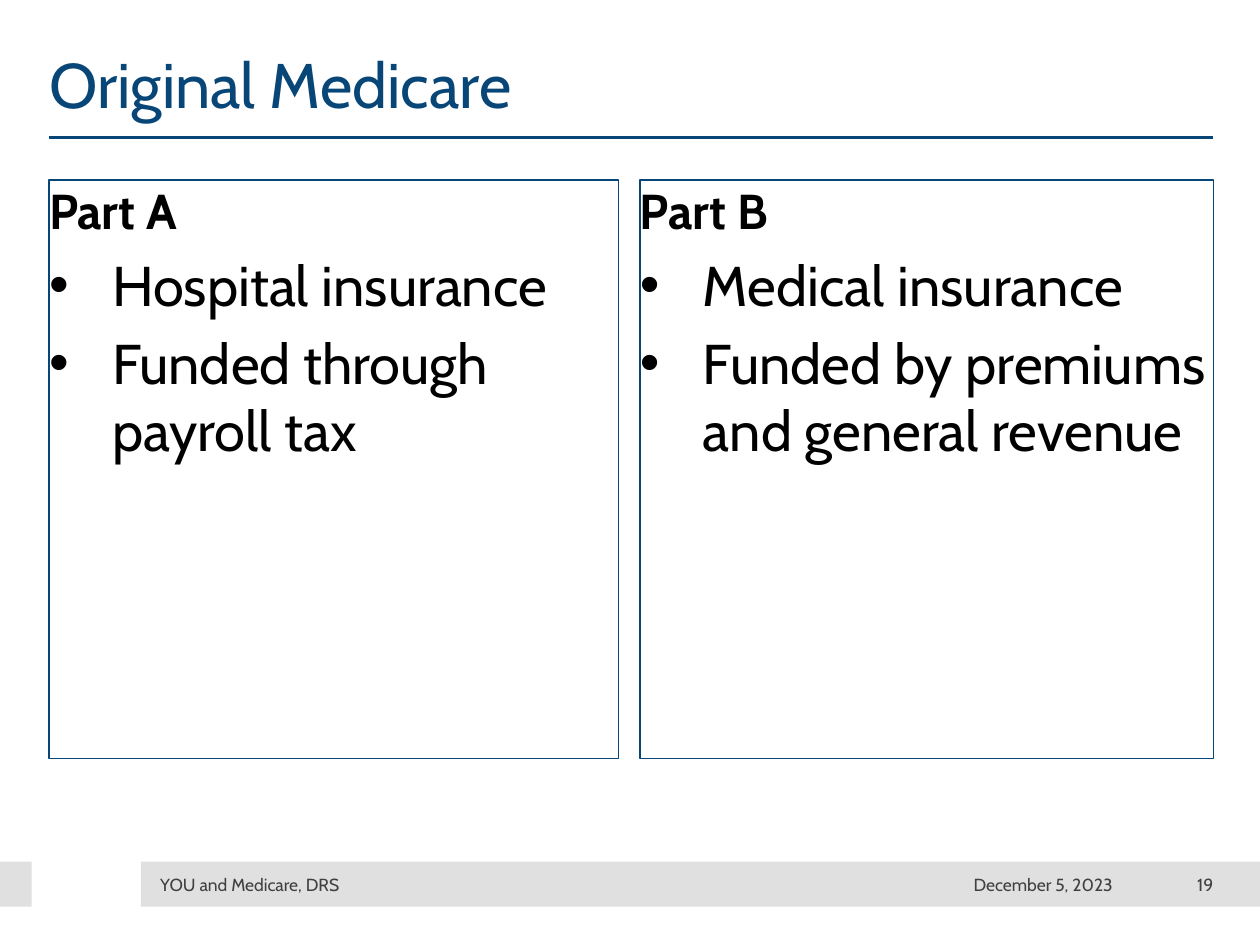
from dataclasses import dataclass

import pptx
import pptx.dml.color
import pptx.enum.shapes
import pptx.enum.text
import pptx.oxml.ns
import pptx.util
from lxml import etree

Cm = pptx.util.Cm
Pt = pptx.util.Pt
Align = pptx.enum.text.PP_ALIGN
Anchor = pptx.enum.text.MSO_ANCHOR

FONT = "Cabin"
NAVY, BLACK, GREY, PALE = "084678", "000000", "404040", "E0E0E0"
LEFT, RIGHT = 0.99, 24.46
BAR_TOP, BAR_HEIGHT = 17.37, 0.91
INDENT = 1.27


@dataclass
class Column:
    left: float
    width: float
    heading: str
    points: list[str]


@dataclass
class FooterItem:
    left: float
    width: float
    words: str
    align: Align


COLUMNS = [
    Column(LEFT, 11.48, "Part A",
           ["Hospital insurance", "Funded through payroll tax"]),
    Column(12.9, 11.56, "Part B",
           ["Medical insurance", "Funded by premiums and general revenue"]),
]
FOOTER = [
    FooterItem(3.23, 10.06, "YOU and Medicare, DRS", Align.LEFT),
    FooterItem(16.51, 5.92, "December 5, 2023", Align.RIGHT),
    FooterItem(22.68, 1.78, "19", Align.RIGHT),
]


def color(value: str) -> pptx.dml.color.RGBColor:
    return pptx.dml.color.RGBColor.from_string(value)


def set_all(target, values: dict) -> None:
    for name, value in values.items():
        setattr(target, name, value)


def place(box, left: float, top: float, width: float, height: float) -> None:
    set_all(box, {"left": Cm(left), "top": Cm(top),
                  "width": Cm(width), "height": Cm(height)})


def prepare_frame(box, anchor: Anchor):
    frame = box.text_frame
    set_all(frame, {"margin_left": 0, "margin_right": 0, "margin_top": 0,
                    "margin_bottom": 0, "word_wrap": True,
                    "auto_size": pptx.enum.text.MSO_AUTO_SIZE.NONE,
                    "vertical_anchor": anchor})
    return frame


def write(para, words: str, size: float, ink: str, bold: bool = False,
          align: Align = Align.LEFT, before: float = 0) -> None:
    set_all(para, {"alignment": align, "space_before": Pt(before)})
    span = para.add_run()
    span.text = words
    set_all(span.font, {"name": FONT, "size": Pt(size), "bold": bold})
    span.font.color.rgb = color(ink)


def set_bullet(para, symbol: str = "") -> None:
    """Give the paragraph a hanging bullet, or none without a symbol."""
    properties = para._p.get_or_add_pPr()
    indent = Cm(INDENT) if symbol else 0
    properties.set("marL", str(indent))
    properties.set("indent", str(-indent))
    tag = pptx.oxml.ns.qn
    if symbol:
        etree.SubElement(properties, tag("a:buFont"), typeface="Arial")
        etree.SubElement(properties, tag("a:buChar"), char=symbol)
    else:
        etree.SubElement(properties, tag("a:buNone"))


def draw_bar(page, left: float, width: float) -> None:
    bar = page.shapes.add_shape(
        pptx.enum.shapes.MSO_SHAPE.RECTANGLE,
        Cm(left), Cm(BAR_TOP), Cm(width), Cm(BAR_HEIGHT))
    bar.shadow.inherit = False
    bar.fill.solid()
    bar.fill.fore_color.rgb = color(PALE)
    bar.line.fill.background()


def draw_rule(page, top: float) -> None:
    rule = page.shapes.add_connector(
        pptx.enum.shapes.MSO_CONNECTOR.STRAIGHT,
        Cm(LEFT), Cm(top), Cm(RIGHT), Cm(top))
    rule.line.color.rgb = color(NAVY)
    rule.line.width = Pt(2)
    etree.SubElement(rule._element.spPr, pptx.oxml.ns.qn("a:effectLst"))


def fill_column(box, column: Column) -> None:
    place(box, column.left, 3.63, column.width, 11.66)
    box.line.color.rgb = color(NAVY)
    box.line.width = Pt(0.75)
    frame = prepare_frame(box, Anchor.TOP)
    heading = frame.paragraphs[0]
    set_bullet(heading)
    write(heading, column.heading, 28, BLACK, bold=True)
    for point in column.points:
        para = frame.add_paragraph()
        set_bullet(para, "•")
        write(para, point, 32, BLACK, before=6.4)


def draw_footer_item(page, item: FooterItem) -> None:
    box = page.shapes.add_textbox(
        Cm(item.left), Cm(17.55), Cm(item.width), Cm(0.56))
    frame = prepare_frame(box, Anchor.MIDDLE)
    write(frame.paragraphs[0], item.words, 10, GREY, align=item.align)


def main() -> None:
    deck = pptx.Presentation()
    set_all(deck, {"slide_width": Cm(25.4), "slide_height": Cm(19.05)})
    page = deck.slides.add_slide(deck.slide_layouts.get_by_name("Two Content"))
    title, *bodies = page.placeholders

    # Title and rule
    place(title, LEFT, 0.91, RIGHT - LEFT, 1.85)
    frame = prepare_frame(title, Anchor.TOP)
    write(frame.paragraphs[0], "Original Medicare", 36, NAVY)
    draw_rule(page, 2.77)

    # Two parts side by side
    for box, column in zip(bodies, COLUMNS):
        fill_column(box, column)

    # Footer band
    draw_bar(page, 0, 0.64)
    draw_bar(page, 2.84, 22.56)
    for item in FOOTER:
        draw_footer_item(page, item)

    deck.save("out.pptx")


if __name__ == "__main__":
    main()
